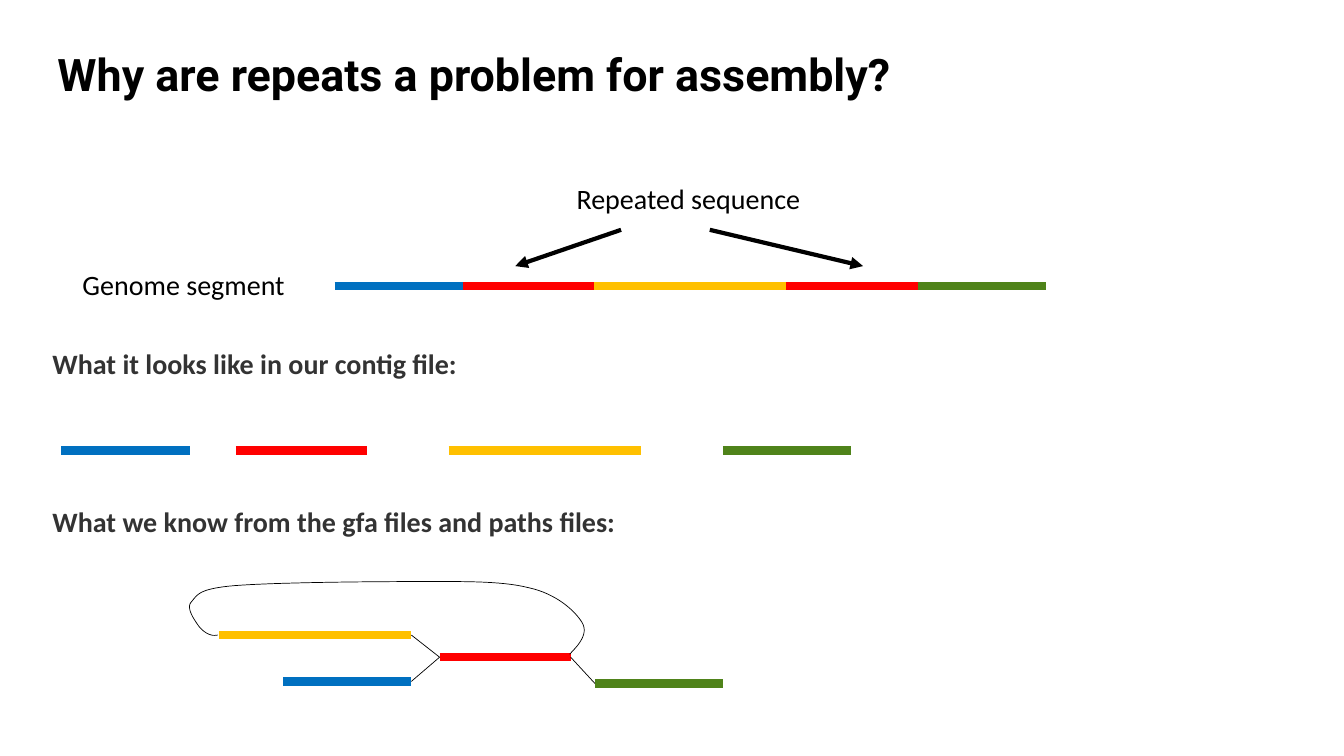
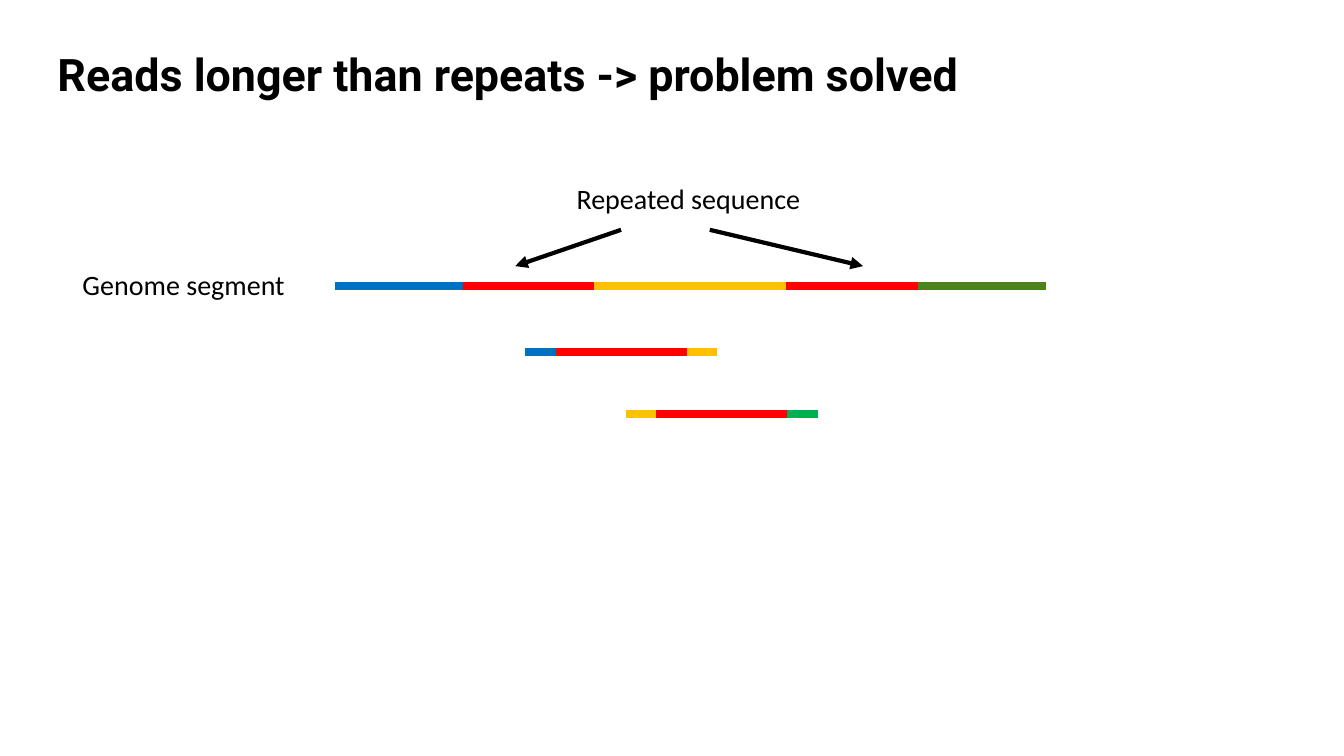
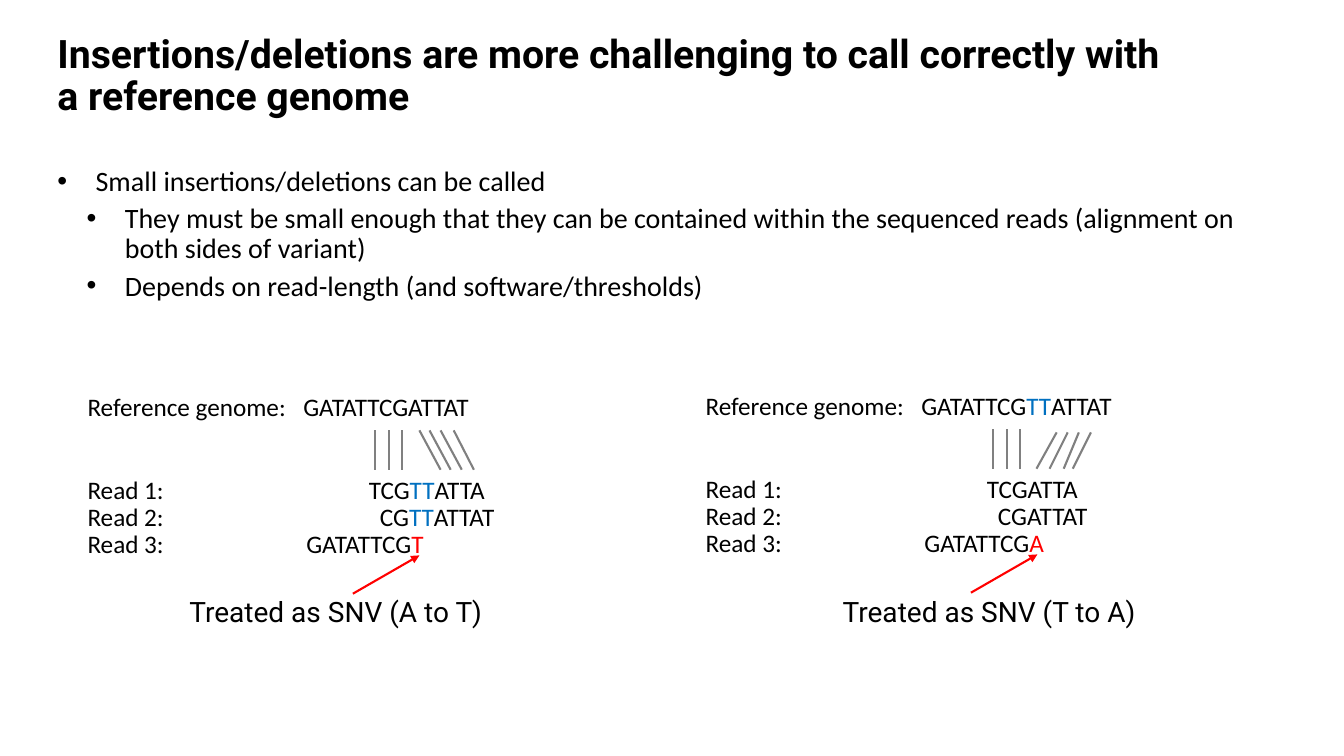
"""Build three slides on repeats and insertions/deletions in sequencing."""
from dataclasses import dataclass

import pptx
import pptx.dml.color
import pptx.enum.shapes
import pptx.enum.text
import pptx.oxml.ns
import pptx.oxml.xmlchemy
import pptx.slide
import pptx.util
from lxml import etree

Inches = pptx.util.Inches
Pt = pptx.util.Pt
Point = tuple[float, float]


@dataclass(frozen=True)
class Theme:
    black: str = "000000"
    heading: str = "333333"
    grey: str = "808080"
    red: str = "FF0000"
    blue: str = "0070C0"
    gold: str = "FFC000"
    green: str = "4F831A"
    bright_green: str = "00B050"
    title_font: str = "Roboto"
    body_font: str = "Calibri"
    title_size: float = 32
    long_title_size: float = 28
    body_size: float = 20
    read_size: float = 18
    bar_width: float = 6
    arrow_width: float = 3
    guide_width: float = 1.5
    hairline: float = 0.5
    line_spacing: float = 0.9


THEME = Theme()


@dataclass(frozen=True)
class Style:
    size: float = THEME.body_size
    font: str = THEME.body_font
    color: str = THEME.black
    bold: bool = False


@dataclass(frozen=True)
class Frame:
    left: float
    top: float
    width: float
    height: float


@dataclass(frozen=True)
class Piece:
    color: str
    length: float


@dataclass(frozen=True)
class Strip:
    left: float
    y: float
    pieces: tuple[Piece, ...]


@dataclass(frozen=True)
class Span:
    text: str
    color: str = THEME.black


@dataclass(frozen=True)
class Row:
    label: str
    indent: float
    spans: tuple[Span, ...]
    space_before: float = 0


@dataclass(frozen=True)
class Panel:
    left: float
    top: float
    rows: tuple[Row, ...]
    slants: tuple[Point, ...]
    slant_top: float
    caption: str
    caption_left: float


BLUE = Piece(THEME.blue, 1.27)
RED = Piece(THEME.red, 1.3)
GOLD = Piece(THEME.gold, 1.91)
GREEN = Piece(THEME.green, 1.27)
FLANK = 0.3

GENOME = Strip(3.32, 2.84, (BLUE, RED, GOLD, RED, GREEN))
CONTIGS = tuple(
    Strip(left, 4.47, (piece,))
    for left, piece in ((0.61, BLUE), (2.34, RED), (4.45, GOLD), (7.17, GREEN))
)
GRAPH_NODES = (
    Strip(2.17, 6.3, (GOLD,)),
    Strip(2.81, 6.76, (BLUE,)),
    Strip(4.36, 6.52, (RED,)),
    Strip(5.9, 6.78, (GREEN,)),
)
GRAPH_LINKS = (
    ((4.08, 6.3), (4.36, 6.52)),
    ((4.08, 6.76), (4.36, 6.52)),
    ((5.66, 6.52), (5.9, 6.78)),
)
LOOP_START = (5.65, 6.49)
LOOP_CURVES = (
    ((5.75, 6.39), (5.84, 6.28), (5.77, 6.17)),
    ((5.7, 6.06), (5.52, 5.89), (5.24, 5.83)),
    ((4.96, 5.76), (4.57, 5.77), (4.09, 5.77)),
    ((3.61, 5.77), (2.7, 5.78), (2.33, 5.81)),
    ((1.97, 5.84), (1.96, 5.9), (1.9, 5.97)),
    ((1.84, 6.03), (1.93, 6.15), (1.97, 6.21)),
    ((2.01, 6.26), (2.08, 6.32), (2.16, 6.3)),
)
LONG_READS = (
    Strip(5.21, 3.49, (Piece(THEME.blue, FLANK), RED, Piece(THEME.gold, FLANK))),
    Strip(6.21, 4.11, (Piece(THEME.gold, FLANK), RED, Piece(THEME.bright_green, FLANK))),
)
BULLETS = (
    (0, "Small insertions/deletions can be called"),
    (1, "They must be small enough that they can be contained within the sequenced reads "
        "(alignment on both sides of variant)"),
    (1, "Depends on read-length (and software/thresholds)"),
)
INSERT = Span("TT", THEME.blue)


def alignment_rows(
    reference: tuple[Span, ...], first: tuple[Span, ...],
    second: tuple[Span, ...], mismatch: str,
) -> tuple[Row, ...]:
    """Return the reference row and its three aligned reads."""
    return (
        Row("Reference genome:", 2.14, reference),
        Row("Read 1:", 2.79, first, 39.5),
        Row("Read 2:", 2.9, second),
        Row("Read 3:", 2.17, (Span("GATATTCG"), Span(mismatch, THEME.red))),
    )


PANELS = (
    Panel(
        0.77, 3.87,
        alignment_rows(
            (Span("GATATTCGATTAT"),),
            (Span("TCG"), INSERT, Span("ATTA")),
            (Span("CG"), INSERT, Span("ATTAT")),
            "T",
        ),
        ((3.39, 3.6), (3.49, 3.7), (3.6, 3.81), (3.73, 3.93)),
        0.4, "Treated as SNV (A to T)", 1.78,
    ),
    Panel(
        6.9, 3.86,
        alignment_rows(
            (Span("GATATTCG"), INSERT, Span("ATTAT")),
            (Span("TCGATTA"),),
            (Span("CGATTAT"),),
            "A",
        ),
        ((3.58, 3.38), (3.69, 3.51), (3.8, 3.65), (3.92, 3.74)),
        0.43, "Treated as SNV (T to A)", 8.26,
    ),
)


def add_element(parent: etree._Element, tag: str, **attributes: str) -> etree._Element:
    """Append a drawing element to a parent."""
    return etree.SubElement(parent, pptx.oxml.ns.qn(tag), attributes)


def format_runs(paragraph, style: Style) -> None:
    """Apply a text style to every run of a paragraph."""
    paragraph.line_spacing = THEME.line_spacing
    for run in paragraph.runs:
        run.font.size = Pt(style.size)
        run.font.name = style.font
        run.font.bold = style.bold
        run.font.color.rgb = pptx.dml.color.RGBColor.from_string(style.color)


def add_page(deck, title: str, size: float = THEME.title_size) -> pptx.slide.Slide:
    """Add a title-only page with the shared title style."""
    page = deck.slides.add_slide(deck.slide_layouts[5])
    box = page.shapes.title
    box.left, box.top = Inches(0.47), Inches(0.24)
    box.width, box.height = Inches(11.32), Inches(1.04)
    frame = box.text_frame
    frame.text = title
    frame.word_wrap = True
    frame.auto_size = pptx.enum.text.MSO_AUTO_SIZE.NONE
    frame.vertical_anchor = pptx.enum.text.MSO_ANCHOR.MIDDLE
    paragraph = frame.paragraphs[0]
    paragraph.alignment = pptx.enum.text.PP_ALIGN.LEFT
    format_runs(paragraph, Style(size, THEME.title_font, bold=True))
    return page


def add_box(page: pptx.slide.Slide, place: Frame, wrap: bool = True):
    """Add an empty text box and return its text frame."""
    box = page.shapes.add_textbox(
        Inches(place.left), Inches(place.top), Inches(place.width), Inches(place.height)
    )
    box.text_frame.word_wrap = wrap
    return box.text_frame


def add_label(page: pptx.slide.Slide, text: str, place: Frame, style: Style = Style()) -> None:
    """Add a one-line label that does not wrap."""
    frame = add_box(page, place, wrap=False)
    frame.auto_size = pptx.enum.text.MSO_AUTO_SIZE.SHAPE_TO_FIT_TEXT
    frame.text = text
    format_runs(frame.paragraphs[0], style)


def add_heading(page: pptx.slide.Slide, text: str, top: float) -> None:
    """Add a bold section heading without insets."""
    frame = add_box(page, Frame(0.52, top, 11.28, 0.9))
    frame.margin_left = frame.margin_right = frame.margin_top = frame.margin_bottom = 0
    frame.text = text
    format_runs(frame.paragraphs[0], Style(color=THEME.heading, bold=True))


def add_line(
    page: pptx.slide.Slide, start: Point, end: Point,
    color: str, width: float, arrow: bool = False,
) -> None:
    """Draw a straight line, with an arrowhead at its end if asked."""
    line = page.shapes.add_connector(
        pptx.enum.shapes.MSO_CONNECTOR.STRAIGHT,
        *(Inches(value) for value in (*start, *end)),
    )
    line.line.color.rgb = pptx.dml.color.RGBColor.from_string(color)
    line.line.width = Pt(width)
    properties = line._element.spPr
    if arrow:
        add_element(properties.find(pptx.oxml.ns.qn("a:ln")), "a:tailEnd", type="triangle")
    add_element(properties, "a:effectLst")


def add_strip(page: pptx.slide.Slide, strip: Strip) -> None:
    """Draw sequence pieces end to end."""
    left = strip.left
    for piece in strip.pieces:
        right = left + piece.length
        add_line(page, (left, strip.y), (right, strip.y), piece.color, THEME.bar_width)
        left = right


def add_genome(page: pptx.slide.Slide) -> None:
    """Draw the labelled genome segment and its repeat arrows."""
    add_label(page, "Genome segment", Frame(0.72, 2.64, 2.23, 0.4))
    add_label(page, "Repeated sequence", Frame(5.62, 1.79, 2.44, 0.4))
    add_strip(page, GENOME)
    for start, end in (((6.16, 2.28), (5.11, 2.64)), ((7.04, 2.28), (8.56, 2.64))):
        add_line(page, start, end, THEME.black, THEME.arrow_width, arrow=True)


def curve_points(start: Point, curves: tuple[tuple[Point, ...], ...], steps: int = 16) -> list[Point]:
    """Sample a chain of cubic curves."""
    points = [start]
    for first, second, end in curves:
        for step in range(1, steps + 1):
            t = step / steps
            weights = ((1 - t) ** 3, 3 * t * (1 - t) ** 2, 3 * t * t * (1 - t), t ** 3)
            corners = (start, first, second, end)
            points.append(tuple(
                sum(weight * corner[axis] for weight, corner in zip(weights, corners))
                for axis in (0, 1)
            ))
        start = end
    return points


def add_loop(page: pptx.slide.Slide) -> None:
    """Draw the loop from the repeat back to the middle contig."""
    points = [(Inches(x), Inches(y)) for x, y in curve_points(LOOP_START, LOOP_CURVES)]
    builder = page.shapes.build_freeform(*points[0])
    builder.add_line_segments(points[1:], close=False)
    loop = builder.convert_to_shape()
    loop.shadow.inherit = False
    loop.fill.background()
    loop.line.color.rgb = pptx.dml.color.RGBColor.from_string(THEME.black)
    loop.line.width = Pt(THEME.hairline)


def add_bullets(page: pptx.slide.Slide) -> None:
    """Add the two-level bullet list."""
    frame = add_box(page, Frame(0.47, 1.61, 12.42, 1.6))
    for index, (level, text) in enumerate(BULLETS):
        paragraph = frame.paragraphs[0] if index == 0 else frame.add_paragraph()
        paragraph.text = text
        paragraph.level = level
        properties = paragraph._p.get_or_add_pPr()
        properties.set("marL", str(Inches((0.38, 0.67)[level])))
        properties.set("indent", str(Inches(-0.38)))
        add_element(properties, "a:buFont", typeface="Arial")
        add_element(properties, "a:buChar", char="•")
        if index:
            paragraph.space_before = Pt(5)
        format_runs(paragraph, Style())


def add_panel(page: pptx.slide.Slide, panel: Panel) -> None:
    """Draw aligned reads, their guide lines and the variant note."""
    frame = add_box(page, Frame(panel.left, panel.top, 5.23, 1.74))
    for index, row in enumerate(panel.rows):
        paragraph = frame.paragraphs[0] if index == 0 else frame.add_paragraph()
        paragraph.text = f"{row.label}\t"
        tabs = add_element(paragraph._p.get_or_add_pPr(), "a:tabLst")
        add_element(tabs, "a:tab", pos=str(Inches(row.indent)), algn="l")
        if row.space_before:
            paragraph.space_before = Pt(row.space_before)
        for span in row.spans:
            paragraph.add_run().text = span.text
        format_runs(paragraph, Style(THEME.read_size))
        for run, span in zip(paragraph.runs[-len(row.spans):], row.spans):
            run.font.color.rgb = pptx.dml.color.RGBColor.from_string(span.color)

    def draw(start: Point, end: Point, color: str, arrow: bool = False) -> None:
        """Draw a line placed relative to the panel."""
        (x1, y1), (x2, y2) = start, end
        add_line(
            page, (panel.left + x1, panel.top + y1), (panel.left + x2, panel.top + y2),
            color, THEME.guide_width, arrow,
        )

    for index in range(3):
        x = 2.95 + 0.135 * index
        draw((x, 0.4), (x, 0.79), THEME.grey)
    for top_x, bottom_x in panel.slants:
        draw((top_x, panel.slant_top), (bottom_x, 0.79), THEME.grey)
    draw((2.73, 2.02), (3.39, 1.64), THEME.red, arrow=True)
    add_label(
        page, panel.caption, Frame(panel.caption_left, 5.89, 3.23, 0.4),
        Style(font=THEME.title_font),
    )


def main() -> None:
    """Build and save the deck."""
    deck = pptx.Presentation()
    deck.slide_width, deck.slide_height = Inches(13.33), Inches(7.5)

    page = add_page(deck, "Why are repeats a problem for assembly?")
    add_genome(page)
    add_heading(page, "What it looks like in our contig file:", 3.48)
    add_heading(page, "What we know from the gfa files and paths files:", 5.04)
    for strip in CONTIGS + GRAPH_NODES:
        add_strip(page, strip)
    add_loop(page)
    for start, end in GRAPH_LINKS:
        add_line(page, start, end, THEME.black, THEME.hairline)

    page = add_page(deck, "Reads longer than repeats -> problem solved")
    add_genome(page)
    for strip in LONG_READS:
        add_strip(page, strip)

    page = add_page(
        deck,
        "Insertions/deletions are more challenging to call correctly with a reference genome",
        THEME.long_title_size,
    )
    add_bullets(page)
    for panel in PANELS:
        add_panel(page, panel)

    deck.save("out.pptx")


if __name__ == "__main__":
    main()
